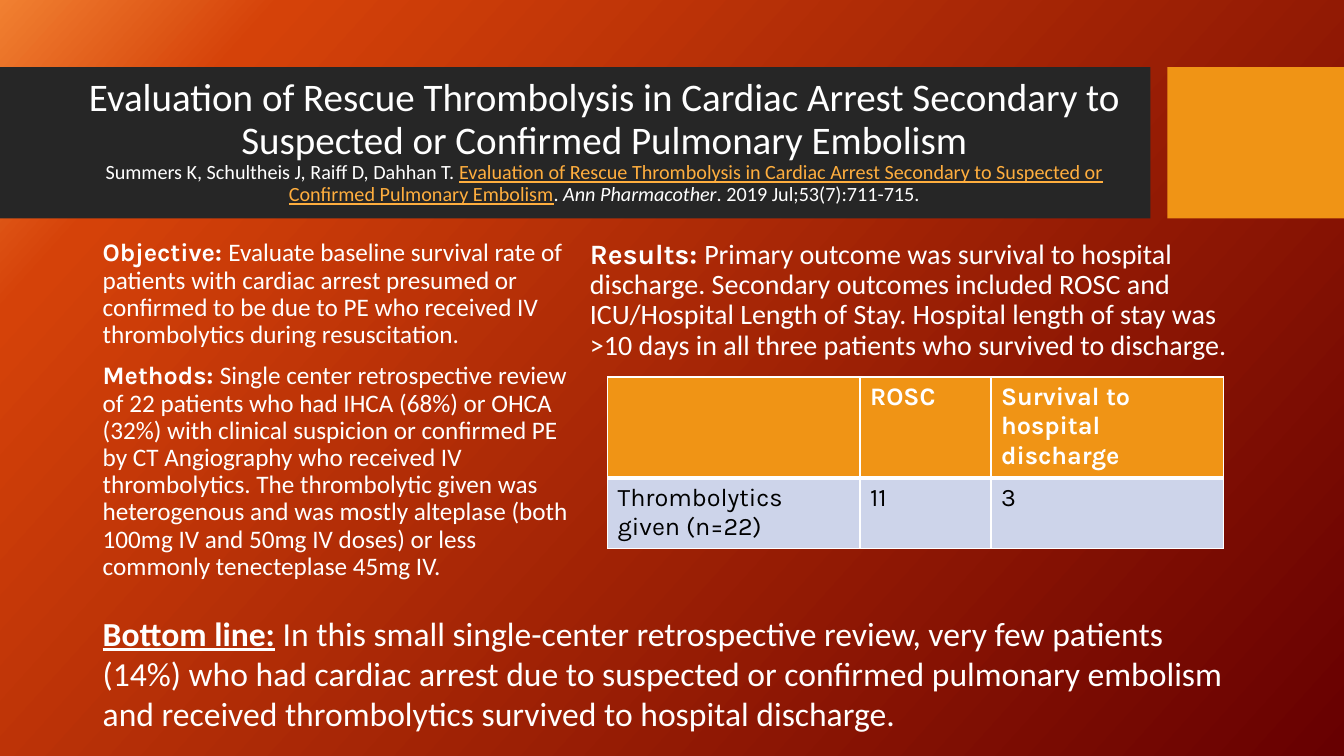
from copy import deepcopy

from lxml.etree import SubElement
from pptx import Presentation
from pptx.dml.color import RGBColor
from pptx.enum.shapes import MSO_SHAPE
from pptx.enum.text import MSO_ANCHOR, MSO_AUTO_SIZE, PP_ALIGN
from pptx.oxml.ns import qn
from pptx.util import Pt

WHITE = RGBColor(0xFF, 0xFF, 0xFF)
BLACK = RGBColor(0x00, 0x00, 0x00)
CHARCOAL = RGBColor(0x26, 0x26, 0x26)
ORANGE = RGBColor(0xF0, 0x94, 0x15)
LINK_GOLD = RGBColor(0xFF, 0xAE, 0x3E)
PALE_BLUE = RGBColor(0xCD, 0xD4, 0xEA)
BACKDROP = [
    (0, RGBColor(0xF1, 0x80, 0x31)),
    (0.14, RGBColor(0xD5, 0x42, 0x09)),
    (1, RGBColor(0x67, 0x00, 0x01)),
]

STUDY = ("Evaluation of Rescue Thrombolysis in Cardiac Arrest Secondary to "
         "Suspected or Confirmed Pulmonary Embolism")
OBJECTIVE = ("Evaluate baseline survival rate of patients with cardiac arrest presumed "
             "or confirmed to be due to PE who received IV thrombolytics during "
             "resuscitation.")
METHODS = ("Single center retrospective review of 22 patients who had IHCA (68%) or OHCA "
           "(32%) with clinical suspicion or confirmed PE by CT Angiography who received "
           "IV thrombolytics. The thrombolytic given was heterogenous and was mostly "
           "alteplase (both 100mg IV and 50mg IV doses) or less commonly tenecteplase "
           "45mg IV.")
RESULTS = ("Primary outcome was survival to hospital discharge. Secondary outcomes "
           "included ROSC and ICU/Hospital Length of Stay. Hospital length of stay was "
           ">10 days in all three patients who survived to discharge.")
BOTTOM_LINE = ("In this small single-center retrospective review, very few patients (14%) "
               "who had cardiac arrest due to suspected or confirmed pulmonary embolism "
               "and received thrombolytics survived to hospital discharge.")
OUTCOMES = [
    ["", "ROSC", "Survival to hospital discharge"],
    ["Thrombolytics given (n=22)", "11", "3"],
]


class StudySlide:
    text_font = "Calibri"
    label_font = "Karla"

    def __init__(self, deck):
        self.slide = deck.slides.add_slide(deck.slide_layouts[5])
        self.shapes = self.slide.shapes

    def backdrop(self, colours, angle):
        fill = self.slide.background.fill
        fill.gradient()
        fill.gradient_angle = angle
        stop_list = self.slide.element.find(".//" + qn("a:gsLst"))
        stop_list.insert(1, deepcopy(stop_list[0]))
        for stop, (position, colour) in zip(fill.gradient_stops, colours):
            stop.position = position
            stop.color.rgb = colour

    def band(self, left, width, colour):
        band = self.shapes.add_shape(
            MSO_SHAPE.RECTANGLE, Pt(left), Pt(48), Pt(width), Pt(108))
        band.shadow.inherit = False
        band.fill.solid()
        band.fill.fore_color.rgb = colour
        band.line.fill.background()

    def add_text(self, paragraph, text, size, font=text_font, colour=WHITE,
                 bold=False, italic=False, underline=False):
        run = paragraph.add_run()
        run.text = text
        run.font.size = Pt(size)
        run.font.name = font
        run.font.color.rgb = colour
        run.font.bold = bold
        run.font.italic = italic
        run.font.underline = underline

    def heading(self, study, size, citation_size):
        title = self.shapes.title
        self.shapes.element.append(title.element)  # in front of the bands
        title.left, title.top, title.width, title.height = map(Pt, (53.3, 59, 756.7, 85))
        frame = title.text_frame
        frame.auto_size = MSO_AUTO_SIZE.NONE
        frame.vertical_anchor = MSO_ANCHOR.MIDDLE
        line = frame.paragraphs[0]
        line.alignment = PP_ALIGN.CENTER
        line.line_spacing = 0.9
        self.add_text(line, study, size)
        line.add_line_break()
        line_break = line._p.find(qn("a:br"))
        SubElement(line_break, qn("a:rPr"), sz=str(round(size * 100)))
        self.add_text(line, "Summers K, Schultheis J, Raiff D, Dahhan T. ", citation_size)
        self.add_text(line, study, citation_size, colour=LINK_GOLD, underline=True)
        self.add_text(line, ". ", citation_size)
        self.add_text(line, "Ann Pharmacother", citation_size, italic=True)
        self.add_text(line, ". 2019 Jul;53(7):711-715.", citation_size)

    def text_box(self, left, top, width, height):
        box = self.shapes.add_textbox(Pt(left), Pt(top), Pt(width), Pt(height))
        box.text_frame.word_wrap = True
        return box.text_frame

    def findings(self, left, width, size, sections):
        """Add a column of paragraphs that each open with a bold label."""
        frame = self.text_box(left, 168, width, 266)
        for index, (label, text) in enumerate(sections):
            paragraph = frame.add_paragraph() if index else frame.paragraphs[0]
            paragraph.line_spacing = 0.9
            if index:
                paragraph.space_before = Pt(10)
            self.add_text(paragraph, label + " ", size, self.label_font, bold=True)
            self.add_text(paragraph, text, size)

    def conclusion(self, label, text, size):
        frame = self.text_box(66.3, 434, 828, 94)
        frame.auto_size = MSO_AUTO_SIZE.SHAPE_TO_FIT_TEXT
        paragraph = frame.paragraphs[0]
        self.add_text(paragraph, label, size, bold=True, underline=True)
        self.add_text(paragraph, " ", size, bold=True)
        self.add_text(paragraph, text, size)

    def border(self, cell, side, width):
        line = SubElement(cell._tc.get_or_add_tcPr(), qn("a:ln" + side),
                          w=str(Pt(width)))
        colour = SubElement(line, qn("a:solidFill"))
        SubElement(colour, qn("a:srgbClr"), val=str(WHITE))

    def outcome_table(self, rows, column_widths):
        table = self.shapes.add_table(
            len(rows), len(column_widths), Pt(434), Pt(269.3),
            Pt(sum(column_widths)), Pt(101)).table
        for column, width in zip(table.columns, column_widths):
            column.width = Pt(width)
        for r, row in enumerate(rows):
            header = r == 0
            for c, text in enumerate(row):
                cell = table.cell(r, c)
                thick_side = "B" if header else "T"
                for side in "LRTB":
                    self.border(cell, side, 3 if side == thick_side else 1)
                cell.fill.solid()
                cell.fill.fore_color.rgb = ORANGE if header else PALE_BLUE
                if text:
                    self.add_text(cell.text_frame.paragraphs[0], text, 18, self.label_font,
                                  WHITE if header else BLACK, bold=header)


def main():
    deck = Presentation()
    deck.slide_width, deck.slide_height = Pt(960), Pt(540)
    page = StudySlide(deck)
    page.backdrop(BACKDROP, 318)
    page.band(0, 821.8, CHARCOAL)
    page.band(833.8, 126.2, ORANGE)
    page.heading(STUDY, 27.9, 14.4)
    page.findings(66.3, 348.5, 18, [("Objective:", OBJECTIVE), ("Methods:", METHODS)])
    page.findings(414.3, 479.5, 20, [("Results:", RESULTS)])
    page.outcome_table(OUTCOMES, [180.3, 93.6, 166])
    page.conclusion("Bottom line:", BOTTOM_LINE, 24)
    deck.save("out.pptx")


if __name__ == "__main__":
    main()
